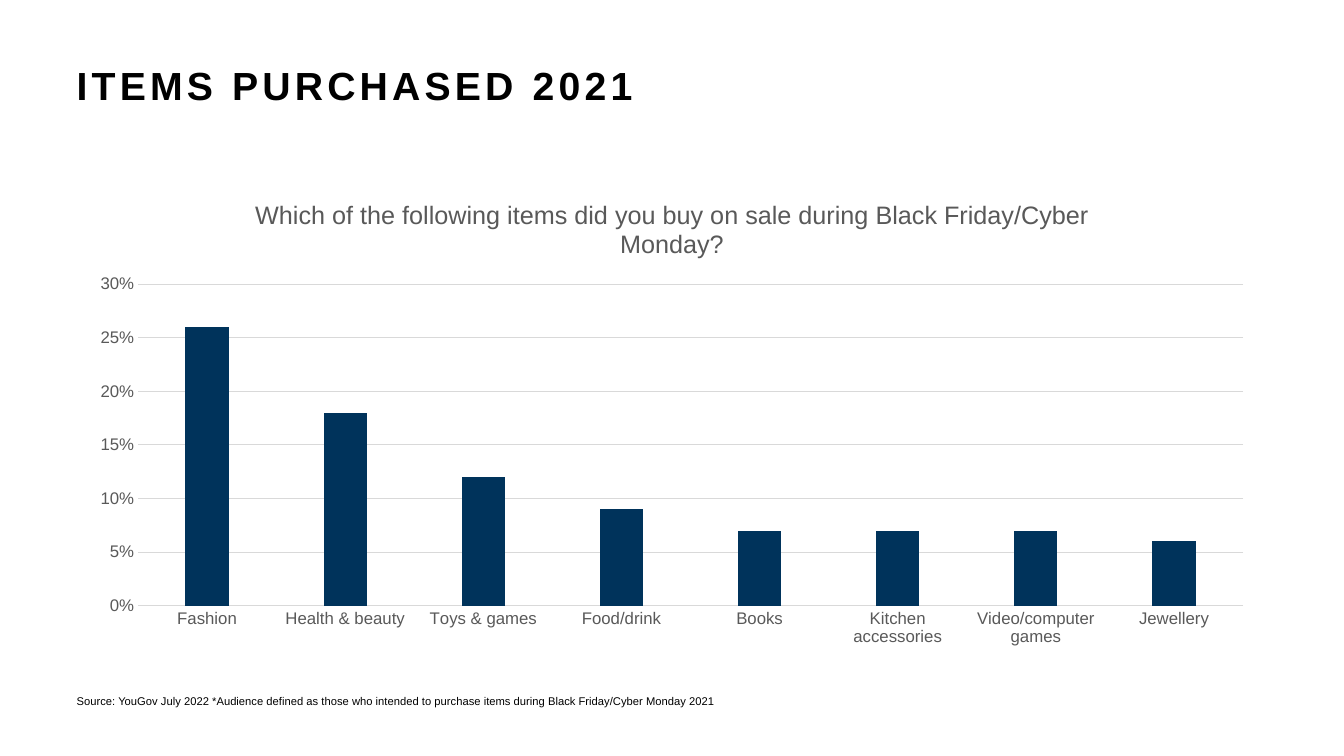
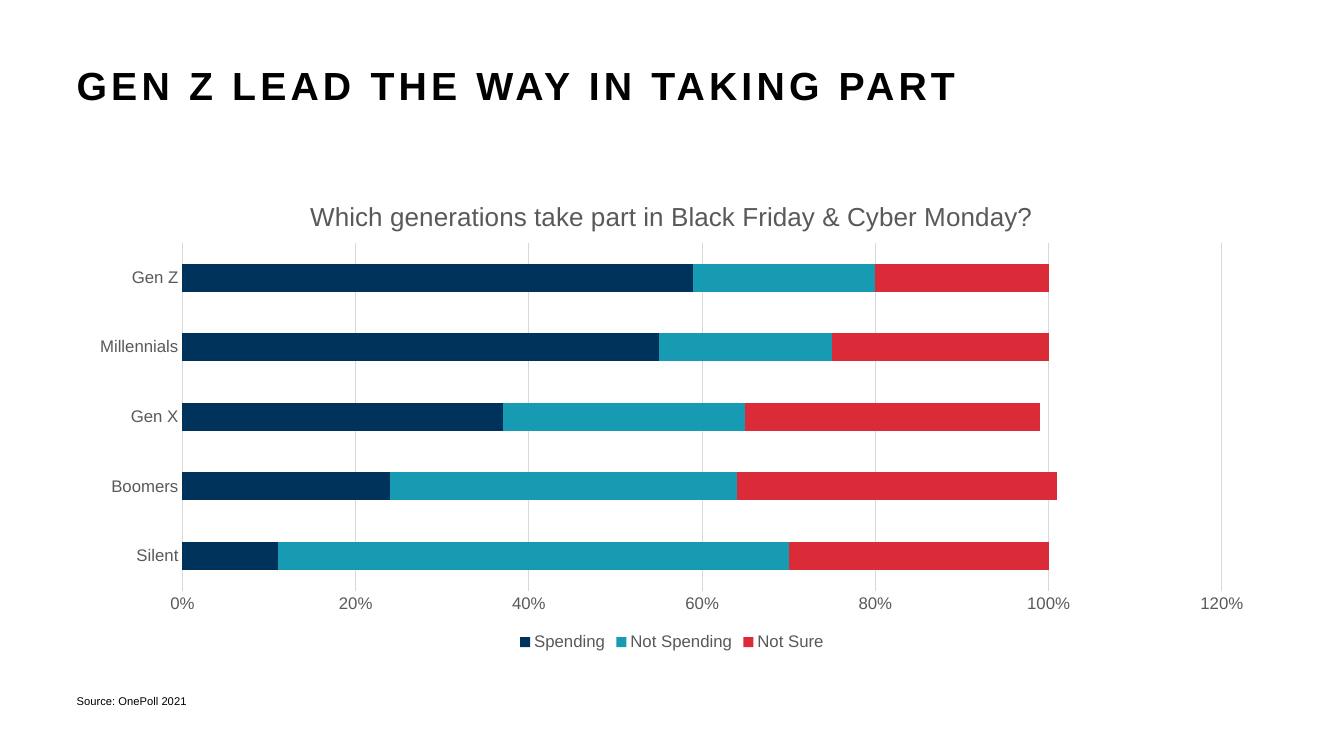
from collections import namedtuple

from lxml import etree
from pptx import Presentation
from pptx.chart.data import CategoryChartData
from pptx.dml.color import RGBColor
from pptx.enum import chart as ch
from pptx.oxml import ns
from pptx.util import Inches, Pt

# Shared look
FONT = "Arial"
BLACK = RGBColor(0x00, 0x00, 0x00)
GREY = RGBColor(0x59, 0x59, 0x59)
RULE = RGBColor(0xD9, 0xD9, 0xD9)
NAVY = RGBColor(0x00, 0x33, 0x5B)
TEAL = RGBColor(0x16, 0x9B, 0xB2)
RED = RGBColor(0xDB, 0x2B, 0x38)

Box = namedtuple("Box", "left top width height")
HEADING_BOX = Box(0.76, 0.68, 11.81, 1.1)
CHART_BOX = Box(0.76, 1.78, 11.81, 4.72)
SOURCE_BOX = Box(0.76, 6.9, 11.81, 0.39)

HEADING = {"name": FONT, "size": Pt(28), "bold": True}
SOURCE = {"name": FONT, "size": Pt(8), "bold": False}
LABEL = {"name": FONT, "size": Pt(12), "bold": False}

SLIDES = [
    {
        "heading": "ITEMS PURCHASED 2021",
        "source": "Source: YouGov July 2022 *Audience defined as those who intended "
                  "to purchase items during Black Friday/Cyber Monday 2021",
        "question": "Which of the following items did you buy on sale during "
                    "Black Friday/Cyber Monday?",
        "question_size": 18,
        "kind": ch.XL_CHART_TYPE.COLUMN_CLUSTERED,
        "categories": ["Fashion", "Health & beauty", "Toys & games", "Food/drink",
                       "Books", "Kitchen accessories", "Video/computer games",
                       "Jewellery"],
        "series": [("Series 1", NAVY,
                    [0.26, 0.18, 0.12, 0.09, 0.07, 0.07, 0.07, 0.06])],
        "gap": 219, "overlap": -27, "top_value": 0.3, "step": 0.05,
        "legend": False,
        "plot": Box(0.61, 1.04, 10.96, 3.19),
    },
    {
        "heading": "GEN Z LEAD THE WAY IN TAKING PART",
        "source": "Source: OnePoll 2021",
        "question": "Which generations take part in Black Friday & Cyber Monday?",
        "question_size": 18.6,
        "kind": ch.XL_CHART_TYPE.BAR_STACKED,
        "categories": ["Silent", "Boomers", "Gen X", "Millennials", "Gen Z"],
        "series": [("Spending", NAVY, [0.11, 0.24, 0.37, 0.55, 0.59]),
                   ("Not Spending", TEAL, [0.59, 0.4, 0.28, 0.2, 0.21]),
                   ("Not Sure", RED, [0.3, 0.37, 0.34, 0.25, 0.2])],
        "gap": 150, "overlap": 100, "top_value": 1.2, "step": 0.2,
        "legend": True,
        "plot": Box(1.05, 0.63, 10.31, 3.45),
    },
]


def style(target, formats, color=None):
    for key, value in formats.items():
        setattr(target, key, value)
    if color is not None:
        target.color.rgb = color


def add_line_of_text(slide, box, words, formats, line_spacing, tracking=0):
    frame = slide.shapes.add_textbox(*map(Inches, box)).text_frame
    style(frame, {"word_wrap": True, "margin_left": 0, "margin_top": 0,
                  "margin_right": 0, "margin_bottom": 0})
    paragraph = frame.paragraphs[0]
    paragraph.line_spacing = line_spacing
    run = paragraph.add_run()
    run.text = words
    style(run.font, formats, BLACK)
    if tracking:
        run.font._element.set("spc", str(tracking * 100))


def place_plot(chart, plot, box):
    """Fix the inner plot area, given in inches within the chart box."""
    area = chart._chartSpace.chart.plotArea
    for old in area.findall(ns.qn("c:layout")):
        area.remove(old)
    layout = etree.Element(ns.qn("c:layout"))
    manual = etree.SubElement(layout, ns.qn("c:manualLayout"))
    settings = {
        "layoutTarget": "inner", "xMode": "edge", "yMode": "edge",
        "x": plot.left / box.width, "y": plot.top / box.height,
        "w": plot.width / box.width, "h": plot.height / box.height,
    }
    for tag, value in settings.items():
        etree.SubElement(manual, ns.qn("c:" + tag)).set("val", str(value))
    area.insert(0, layout)


def style_axes(chart, top_value, step):
    categories, values = chart.category_axis, chart.value_axis
    for axis in (categories, values):
        style(axis, {"major_tick_mark": ch.XL_TICK_MARK.NONE,
                     "minor_tick_mark": ch.XL_TICK_MARK.NONE})
        style(axis.tick_labels.font, LABEL, GREY)
    style(values, {"minimum_scale": 0, "maximum_scale": top_value,
                   "major_unit": step, "has_major_gridlines": True})
    style(values.tick_labels, {"number_format": "0%",
                               "number_format_is_linked": False})
    values.format.line.fill.background()
    for line in (categories.format.line, values.major_gridlines.format.line):
        style(line, {"width": Pt(0.75)}, RULE)


def add_survey_chart(slide, box, content):
    data = CategoryChartData(number_format="0%")
    data.categories = content["categories"]
    for name, _, shares in content["series"]:
        data.add_series(name, shares)
    chart = slide.shapes.add_chart(content["kind"], *map(Inches, box), data).chart
    style(chart.font, {"name": FONT, "size": Pt(10)}, BLACK)

    # Question above the plot
    chart.has_title = True
    question = chart.chart_title.text_frame.paragraphs[0].add_run()
    question.text = content["question"]
    style(question.font, {"name": FONT, "size": Pt(content["question_size"]),
                          "bold": False}, GREY)
    chart.chart_title.include_in_layout = False

    # Bars
    bars = chart.plots[0]
    style(bars, {"gap_width": content["gap"], "overlap": content["overlap"],
                 "vary_by_categories": False})
    for series, (_, color, _) in zip(bars.series, content["series"]):
        series.format.fill.solid()
        series.format.fill.fore_color.rgb = color
        series.invert_if_negative = False

    style_axes(chart, content["top_value"], content["step"])
    place_plot(chart, content["plot"], box)

    # Legend
    chart.has_legend = content["legend"]
    if chart.has_legend:
        style(chart.legend, {"position": ch.XL_LEGEND_POSITION.BOTTOM,
                             "include_in_layout": False})
        style(chart.legend.font, LABEL, GREY)


def add_survey_slide(deck, content):
    slide = deck.slides.add_slide(deck.slide_layouts[6])
    add_line_of_text(slide, HEADING_BOX, content["heading"], HEADING, 0.85, tracking=3)
    add_line_of_text(slide, SOURCE_BOX, content["source"], SOURCE, 0.9)
    add_survey_chart(slide, CHART_BOX, content)


def main():
    deck = Presentation()
    deck.slide_width, deck.slide_height = Inches(13.33), Inches(7.5)
    for content in SLIDES:
        add_survey_slide(deck, content)
    deck.save("out.pptx")


if __name__ == "__main__":
    main()
